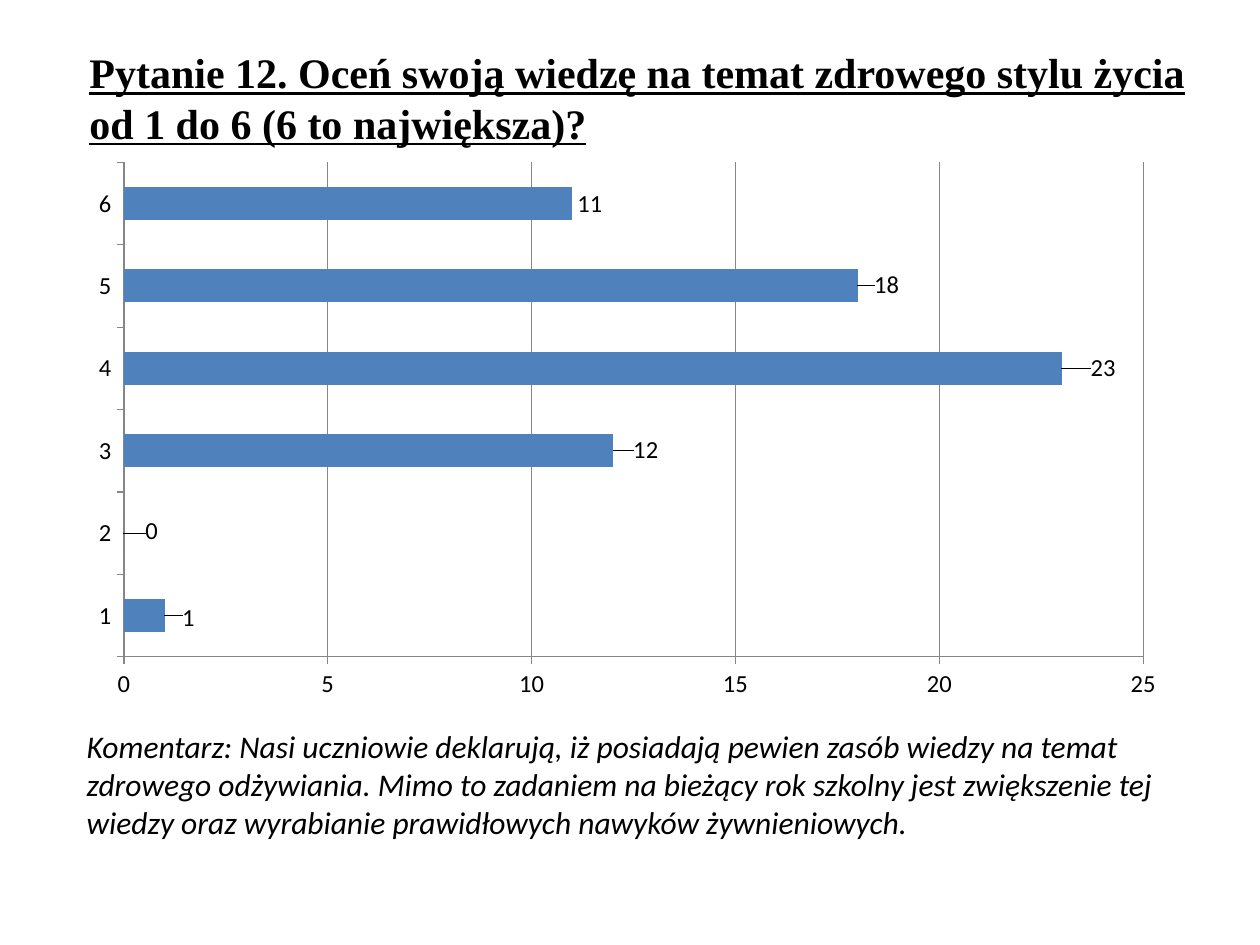
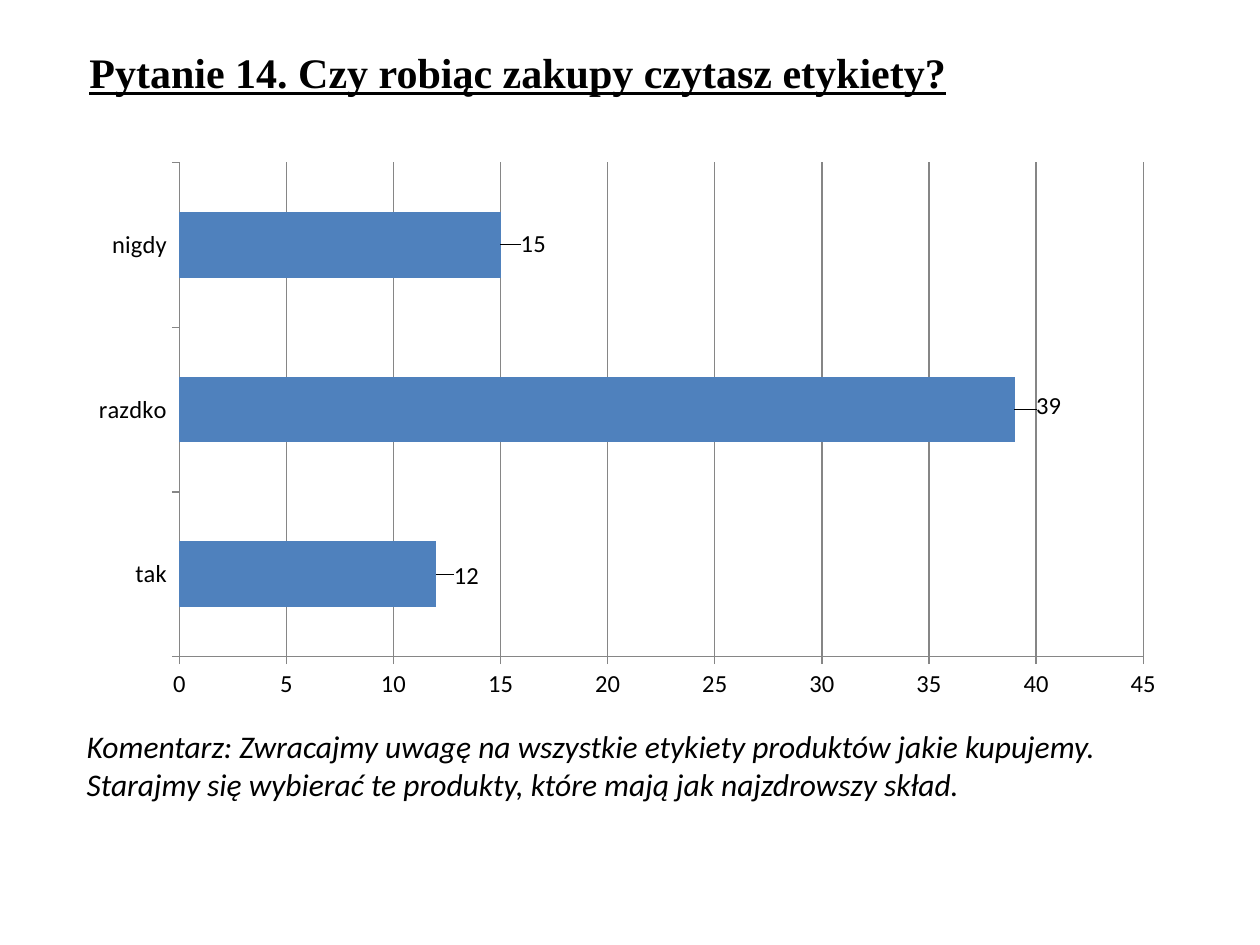
from lxml import etree
from pptx import Presentation
from pptx.chart.data import CategoryChartData
from pptx.dml.color import RGBColor
from pptx.enum.chart import XL_CHART_TYPE, XL_LABEL_POSITION, XL_TICK_MARK
from pptx.enum.text import MSO_ANCHOR, MSO_AUTO_SIZE, PP_ALIGN
from pptx.oxml.ns import qn
from pptx.util import Inches, Pt

BAR_CLUSTERED = XL_CHART_TYPE.BAR_CLUSTERED
OUTSIDE_END = XL_LABEL_POSITION.OUTSIDE_END
TICK_OUTSIDE = XL_TICK_MARK.OUTSIDE
TOP = MSO_ANCHOR.TOP
FIT_SHAPE = MSO_AUTO_SIZE.SHAPE_TO_FIT_TEXT
LEFT = PP_ALIGN.LEFT

COLORS = {"text": "000000", "bar": "4F81BD", "line": "868686"}
TITLE_FONT, BODY_FONT = "Times New Roman", "Calibri"
TITLE_ONLY_LAYOUT = 5
CHART_LEFT, CHART_TOP, CHART_WIDTH, CHART_HEIGHT = 0.61, 1.2, 8.74, 4.44

# Each answer: category, count, label shift right and down in inches
QUESTIONS = [
    {
        "title": "Pytanie 12. Oceń swoją wiedzę na temat zdrowego stylu życia "
                 "od 1 do 6 (6 to największa)?",
        "title_height": 0.91,
        "answers": [
            ("1", 1, 0.1, 0.02),
            ("2", 0, 0.13, -0.02),
            ("3", 12, 0.12, -0.01),
            ("4", 23, 0.19, 0),
            ("5", 18, 0.09, -0.01),
            ("6", 11, 0, 0),
        ],
        "axis_maximum": 25,
        "comment": "Komentarz: Nasi uczniowie deklarują, iż posiadają pewien zasób "
                   "wiedzy na temat zdrowego odżywiania. Mimo to zadaniem na bieżący "
                   "rok szkolny jest zwiększenie tej wiedzy oraz wyrabianie "
                   "prawidłowych nawyków żywnieniowych.",
        "comment_height": 1.01,
    },
    {
        "title": "Pytanie 14. Czy robiąc zakupy czytasz etykiety?",
        "title_height": 0.5,
        "answers": [
            ("tak", 12, 0.1, 0.01),
            ("razdko", 39, 0.13, -0.03),
            ("nigdy", 15, 0.12, -0.01),
        ],
        "axis_maximum": 45,
        "comment": "Komentarz: Zwracajmy uwagę na wszystkie etykiety produktów jakie "
                   "kupujemy. Starajmy się wybierać te produkty, które mają jak "
                   "najzdrowszy skład.",
        "comment_height": 0.71,
    },
]


def color(name):
    return RGBColor.from_string(COLORS[name])


def style_font(font, name, size):
    font.name = name
    font.size = Pt(size)
    font.color.rgb = color("text")


def write_text(shape, text, font_name, size):
    """Fill the shape with one left-aligned run and return its font."""
    frame = shape.text_frame
    frame.word_wrap = True
    frame.auto_size = FIT_SHAPE
    frame.vertical_anchor = TOP
    paragraph = frame.paragraphs[0]
    paragraph.alignment = LEFT
    run = paragraph.add_run()
    run.text = text
    style_font(run.font, font_name, size)
    return run.font


def add_title(slide, text, height):
    title = slide.shapes.title
    title.left, title.top = Inches(0.61), Inches(0.32)
    title.width, title.height = Inches(8.9), Inches(height)
    font = write_text(title, text, TITLE_FONT, 24)
    font.bold = True
    font.underline = True


def add_comment(slide, text, height):
    box = slide.shapes.add_textbox(
        Inches(0.59), Inches(5.72), Inches(8.9), Inches(height))
    write_text(box, text, BODY_FONT, 18).italic = True


def shift_label(label_element, right, down):
    """Move a data label away from its default place."""
    layout = etree.Element(qn("c:layout"))
    manual = etree.SubElement(layout, qn("c:manualLayout"))
    etree.SubElement(manual, qn("c:x"), val=f"{right / CHART_WIDTH:.4f}")
    etree.SubElement(manual, qn("c:y"), val=f"{down / CHART_HEIGHT:.4f}")
    label_element.find(qn("c:idx")).addnext(layout)


def style_axis(axis):
    axis.major_tick_mark = TICK_OUTSIDE
    axis.format.line.color.rgb = color("line")
    style_font(axis.tick_labels.font, BODY_FONT, 14)


def label_bars(chart, answers):
    plot = chart.plots[0]
    plot.has_data_labels = True
    plot.data_labels.show_value = True
    style_font(plot.data_labels.font, BODY_FONT, 14)
    for index in range(len(answers)):
        label = plot.series[0].points[index].data_label
        label.position = OUTSIDE_END
        style_font(label.font, BODY_FONT, 14)
    label_elements = chart.element.iter(qn("c:dLbl"))
    for element, (_, _, right, down) in zip(label_elements, answers):
        shift_label(element, right, down)


def add_answer_chart(slide, answers, axis_maximum):
    data = CategoryChartData()
    data.categories = [answer[0] for answer in answers]
    data.add_series("Series 1", [answer[1] for answer in answers])
    chart = slide.shapes.add_chart(
        BAR_CLUSTERED, Inches(CHART_LEFT), Inches(CHART_TOP),
        Inches(CHART_WIDTH), Inches(CHART_HEIGHT), data).chart
    chart.has_legend = False
    chart.has_title = False
    style_font(chart.font, BODY_FONT, 18)

    plot = chart.plots[0]
    plot.gap_width = 150
    plot.vary_by_categories = False
    fill = plot.series[0].format.fill
    fill.solid()
    fill.fore_color.rgb = color("bar")

    style_axis(chart.category_axis)
    value_axis = chart.value_axis
    style_axis(value_axis)
    value_axis.minimum_scale = 0
    value_axis.maximum_scale = axis_maximum
    value_axis.major_unit = 5
    value_axis.has_major_gridlines = True
    value_axis.major_gridlines.format.line.color.rgb = color("line")
    label_bars(chart, answers)


def main():
    presentation = Presentation()
    presentation.slide_width = Inches(10)
    presentation.slide_height = Inches(7.5)
    layout = presentation.slide_layouts[TITLE_ONLY_LAYOUT]
    for question in QUESTIONS:
        slide = presentation.slides.add_slide(layout)
        add_title(slide, question["title"], question["title_height"])
        add_answer_chart(slide, question["answers"], question["axis_maximum"])
        add_comment(slide, question["comment"], question["comment_height"])
    presentation.save("out.pptx")


if __name__ == "__main__":
    main()
